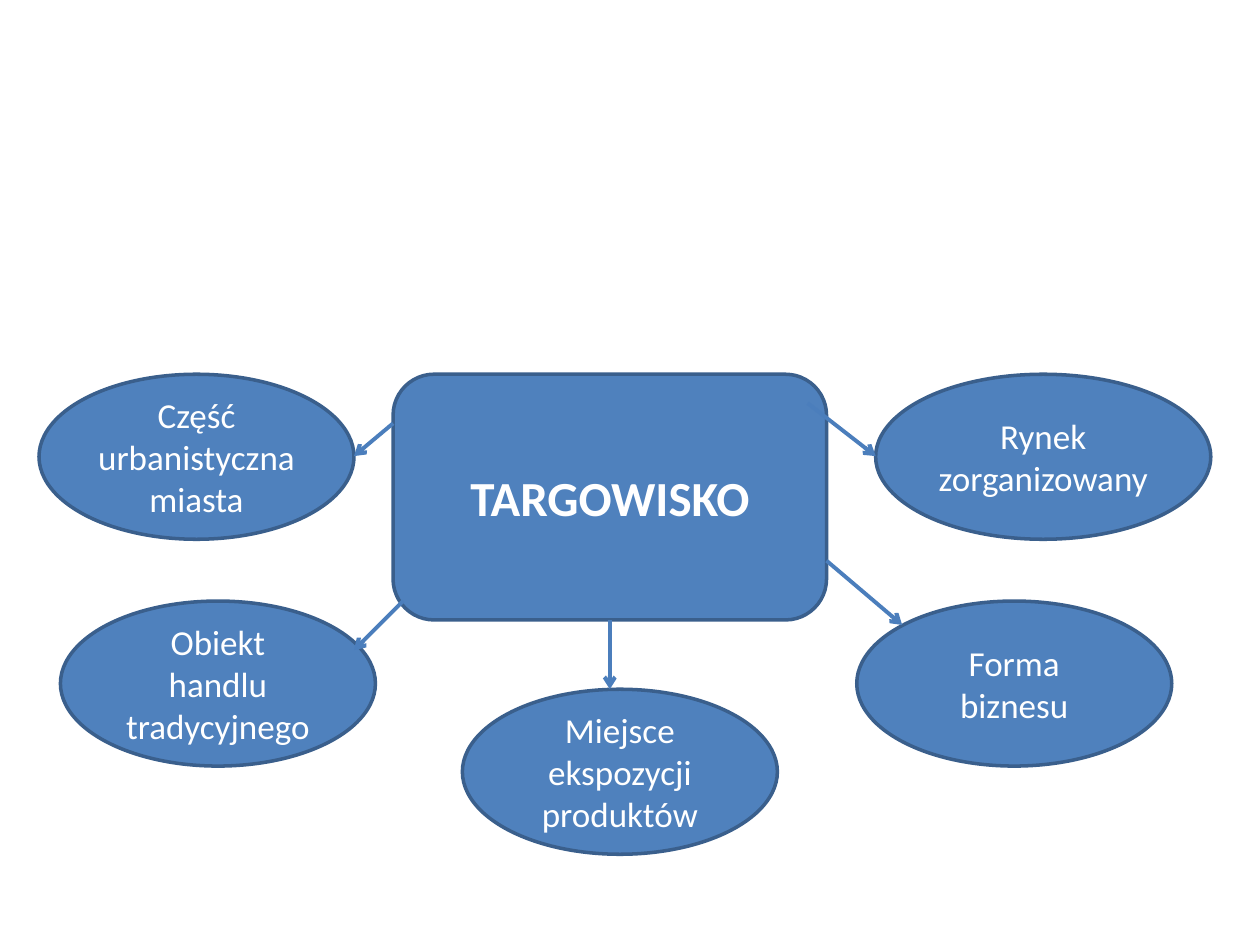
from pptx import Presentation
from pptx.dml.color import RGBColor
from pptx.enum.shapes import MSO_CONNECTOR as Connector, MSO_SHAPE as Shape
from pptx.enum.text import MSO_ANCHOR as Anchor, PP_ALIGN as Align
from pptx.oxml.ns import qn
from pptx.util import Inches, Pt
from lxml.etree import SubElement

BLANK_LAYOUT = 6
BOTTOM = 2


def color(value):
    return RGBColor.from_string(value)


class Diagram:
    """Style and current slide of the diagram."""

    fill, outline, arrow_color, text_color = "4F81BD", "3A5F8C", "4B7EBC", "FFFFFF"
    font = "Calibri"

    def __init__(self, page):
        self.page = page

    def node(self, kind, bounds, text, size=20, bold=False):
        box = self.page.shapes.add_shape(kind, *map(Inches, bounds))
        box.shadow.inherit = False
        box.fill.solid()
        box.fill.fore_color.rgb = color(self.fill)
        box.line.color.rgb = color(self.outline)
        box.line.width = Pt(2)
        frame = box.text_frame
        frame.word_wrap = True
        frame.vertical_anchor = Anchor.MIDDLE
        para = frame.paragraphs[0]
        para.alignment = Align.CENTER
        span = para.add_run()
        span.text = text
        formats = {"name": self.font, "size": Pt(size), "bold": bold}
        for name, value in formats.items():
            setattr(span.font, name, value)
        span.font.color.rgb = color(self.text_color)
        return box

    def arrow(self, start, end):
        line = self.page.shapes.add_connector(
            Connector.STRAIGHT, *map(Inches, start + end))
        line.line.color.rgb = color(self.arrow_color)
        line.line.width = Pt(2.25)
        SubElement(line.line._get_or_add_ln(), qn("a:tailEnd"), type="arrow")
        SubElement(line._element.spPr, qn("a:effectLst"))
        return line


def main():
    deck = Presentation()
    deck.slide_width, deck.slide_height = Inches(10), Inches(7.5)
    diagram = Diagram(deck.slides.add_slide(deck.slide_layouts[BLANK_LAYOUT]))

    # Central concept
    market = diagram.node(Shape.ROUNDED_RECTANGLE, (3.12, 2.97, 3.44, 1.95),
                          "TARGOWISKO", size=28, bold=True)

    # Surrounding aspects: left, top, width, text
    upper, lower, bottom = 2.97, 4.77, 5.47
    aspects = [
        (0.31, upper, 2.5, "Część urbanistyczna miasta"),
        (0.48, lower, 2.5, "Obiekt handlu tradycyjnego"),
        (3.67, bottom, 2.5, "Miejsce ekspozycji produktów"),
        (6.8, lower, 2.5, "Forma biznesu"),
        (6.95, upper, 2.66, "Rynek zorganizowany"),
    ]
    for left, top, width, text in aspects:
        diagram.node(Shape.OVAL, (left, top, width, 1.31), text)

    # Arrows from the centre to the aspects
    for start, end in [
        ((3.12, 3.36), (2.81, 3.62)),
        ((6.41, 3.2), (6.95, 3.62)),
        ((6.56, 4.45), (7.16, 4.96)),
        ((3.2, 4.77), (2.81, 5.16)),
    ]:
        diagram.arrow(start, end)
    down = diagram.arrow((4.84, 4.92), (4.84, bottom))
    down.begin_connect(market, BOTTOM)

    deck.save("out.pptx")


if __name__ == "__main__":
    main()
